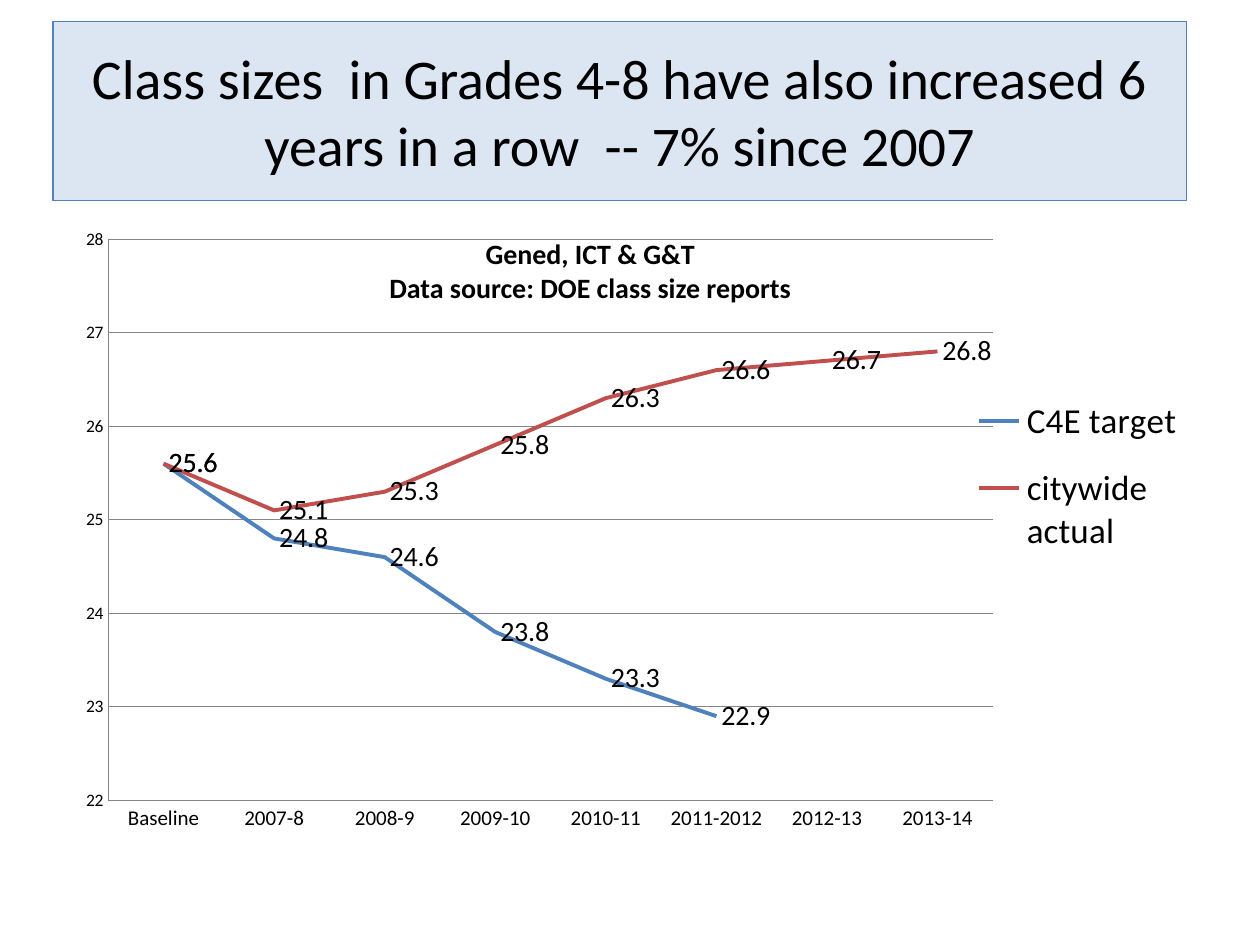
from lxml import etree
from pptx import Presentation
from pptx.chart.data import CategoryChartData
from pptx.dml.color import RGBColor
from pptx.enum.chart import XL_CHART_TYPE, XL_LABEL_POSITION, XL_LEGEND_POSITION, XL_MARKER_STYLE, XL_TICK_MARK
from pptx.enum.shapes import MSO_SHAPE
from pptx.enum.text import MSO_ANCHOR, PP_ALIGN
from pptx.oxml.ns import qn
from pptx.util import Inches, Pt

LINE_CHART = XL_CHART_TYPE.LINE
LABEL_RIGHT = XL_LABEL_POSITION.RIGHT
LEGEND_RIGHT = XL_LEGEND_POSITION.RIGHT
NO_MARKER = XL_MARKER_STYLE.NONE
NO_TICK = XL_TICK_MARK.NONE
RECTANGLE = MSO_SHAPE.RECTANGLE
MIDDLE = MSO_ANCHOR.MIDDLE
CENTER = PP_ALIGN.CENTER

COLORS = {
    "text": "000000",
    "banner": "DCE6F2",
    "target": "4F81BD",
    "actual": "C0504D",
    "grid": "868686",
}
CATEGORIES = ["Baseline", "2007-8", "2008-9", "2009-10", "2010-11", "2011-2012", "2012-13", "2013-14"]
CLASS_SIZES = [
    ("C4E target", "target", [25.6, 24.8, 24.6, 23.8, 23.3, 22.9, None, None]),
    ("citywide actual", "actual", [25.6, 25.1, 25.3, 25.8, 26.3, 26.6, 26.7, 26.8]),
]


class SlideBuilder:
    """Holds the style and the current slide."""

    font_name = "Calibri"

    def __init__(self, slide):
        self.slide = slide

    def color(self, name):
        return RGBColor.from_string(COLORS[name])

    def style_font(self, font, size, bold=False):
        font.name = self.font_name
        font.size = Pt(size)
        font.bold = bold
        font.color.rgb = self.color("text")

    def style_line(self, line, color, width):
        line.color.rgb = self.color(color)
        line.width = Pt(width)

    def fill_text(self, text_frame, lines, size, bold=False):
        text_frame.text = "\n".join(lines)
        for paragraph in text_frame.paragraphs:
            paragraph.alignment = CENTER
            self.style_font(paragraph.font, size, bold)

    def banner(self, text, left, top, width, height):
        shape = self.slide.shapes.add_shape(
            RECTANGLE, Inches(left), Inches(top), Inches(width), Inches(height))
        shape.shadow.inherit = False
        shape.fill.solid()
        shape.fill.fore_color.rgb = self.color("banner")
        self.style_line(shape.line, "target", 0.75)
        shape.text_frame.vertical_anchor = MIDDLE
        self.fill_text(shape.text_frame, [text], 32)

    def caption(self, lines, left, top, width, height):
        box = self.slide.shapes.add_textbox(
            Inches(left), Inches(top), Inches(width), Inches(height))
        box.text_frame.word_wrap = False
        self.fill_text(box.text_frame, lines, 16, bold=True)

    def place_part(self, part, index, target, x, y, w, h):
        """Give a chart part a manual layout, in fractions of the chart."""
        for old_layout in part.findall(qn("c:layout")):
            part.remove(old_layout)
        layout = etree.Element(qn("c:layout"))
        manual = etree.SubElement(layout, qn("c:manualLayout"))
        settings = [("layoutTarget", target)] if target else []
        settings += [("xMode", "edge"), ("yMode", "edge"), ("x", x), ("y", y), ("w", w), ("h", h)]
        for tag, value in settings:
            etree.SubElement(manual, qn("c:" + tag)).set("val", str(value))
        part.insert(index, layout)

    def line_chart(self, categories, series_rows, left, top, width, height):
        data = CategoryChartData(number_format="0.0")
        data.categories = categories
        for name, _, values in series_rows:
            data.add_series(name, values)
        chart = self.slide.shapes.add_chart(
            LINE_CHART, Inches(left), Inches(top), Inches(width), Inches(height), data).chart
        chart.has_title = False
        self.style_font(chart.font, 10)

        # Series and their labels
        plot = chart.plots[0]
        plot.vary_by_categories = False
        for series, (_, color, _) in zip(plot.series, series_rows):
            series.smooth = False
            series.marker.style = NO_MARKER
            self.style_line(series.format.line, color, 2.25)
            labels = series.data_labels
            labels.show_value = True
            labels.position = LABEL_RIGHT
            self.style_font(labels.font, 16)

        # Axes
        for axis, size in ((chart.category_axis, 12), (chart.value_axis, 10)):
            axis.major_tick_mark = axis.minor_tick_mark = NO_TICK
            self.style_font(axis.tick_labels.font, size)
            self.style_line(axis.format.line, "grid", 0.75)
        value_axis = chart.value_axis
        value_axis.minimum_scale, value_axis.maximum_scale = 22, 28
        value_axis.major_unit = 1
        value_axis.tick_labels.number_format = "0"
        value_axis.tick_labels.number_format_is_linked = False
        self.style_line(value_axis.major_gridlines.format.line, "grid", 0.75)

        # Legend and layout
        chart.has_legend = True
        legend = chart.legend
        legend.position = LEGEND_RIGHT
        legend.include_in_layout = False
        self.style_font(legend.font, 20)
        plot_area = chart.element.find(".//" + qn("c:plotArea"))
        legend_part = chart.element.find(".//" + qn("c:legend"))
        self.place_part(plot_area, 0, "inner", 0.04, 0.03, 0.78, 0.9)
        self.place_part(legend_part, 1, None, 0.8, 0.25, 0.19, 0.32)


def main():
    presentation = Presentation()
    presentation.slide_width = Inches(10)
    presentation.slide_height = Inches(7.5)
    builder = SlideBuilder(presentation.slides.add_slide(presentation.slide_layouts[6]))

    # Title banner
    builder.banner("Class sizes  in Grades 4-8 have also increased 6 years in a row  -- 7% since 2007",
                   0.42, 0.17, 9, 1.42)
    # Class sizes by year
    builder.line_chart(CATEGORIES, CLASS_SIZES, 0.5, 1.75, 9, 4.95)
    # Chart heading
    builder.caption(["Gened, ICT & G&T", "Data source: DOE class size reports"], 2.97, 1.83, 3.43, 0.64)

    presentation.save("out.pptx")


if __name__ == "__main__":
    main()
